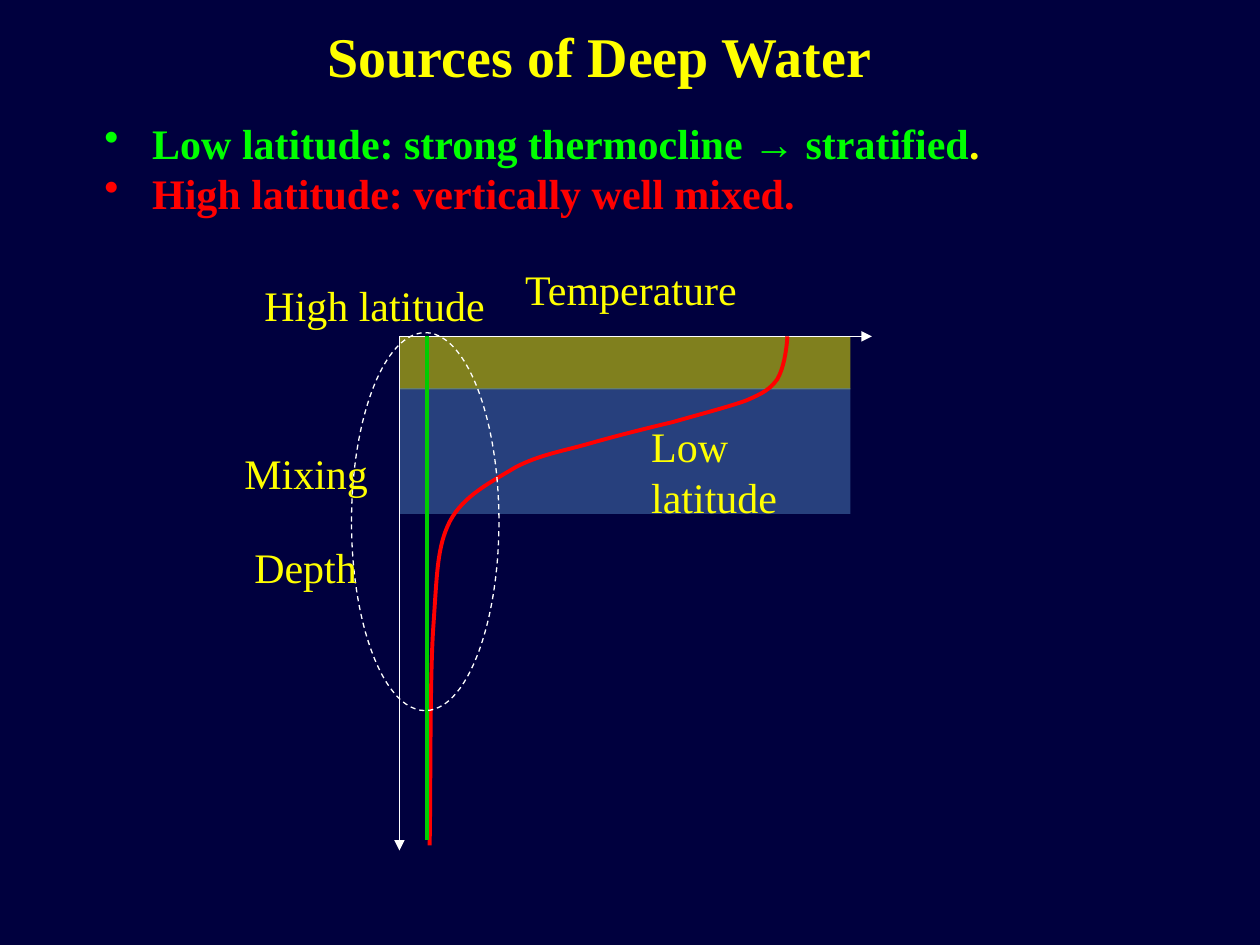
from lxml import etree
from pptx import Presentation
from pptx.dml.color import RGBColor as RGB
from pptx.enum.dml import MSO_LINE as Dash
from pptx.enum.shapes import MSO_CONNECTOR as Link, MSO_SHAPE as Shape
from pptx.enum.text import MSO_AUTO_SIZE as Auto
from pptx.oxml.ns import qn
from pptx.util import Inches, Pt

HUES = {
    "back": "00003E", "text": "FFFF00", "low": "00FF00", "high": "FF0000",
    "warm": "FFFF00", "cool": "4F81BD", "axis": "FFFFFF",
    "curve": "FF0000", "mixed": "00CC00",
}
FONT = "Times New Roman"
LEFT, TOP = 3.17, 2.67  # origin of the depth and temperature axes

LABELS = [
    ("Depth", 1.92, 4.25, 1.04),
    ("Temperature", 4.07, 2.04, 1.96),
    ("Low latitude", 5.07, 3.29, 1.89),
    ("High latitude", 2, 2.17, 1.96),
    ("Mixing", 1.84, 3.5, 1.19),
]
POINTS = [
    (6.25, TOP),
    (6.24, 2.8), (6.22, 2.92), (6.17, 3.01),
    (6.11, 3.09), (6.06, 3.12), (5.92, 3.18),
    (5.78, 3.23), (5.55, 3.29), (5.34, 3.35),
    (5.13, 3.4), (4.89, 3.46), (4.68, 3.52),
    (4.47, 3.58), (4.28, 3.61), (4.09, 3.71),
    (3.91, 3.82), (3.68, 3.93), (3.57, 4.14),
    (3.47, 4.34), (3.47, 4.54), (3.44, 4.97),
    (3.41, 5.4), (3.42, 6.34), (3.41, 6.71),
]


def hue(name):
    return RGB.from_string(HUES[name])


def add(node, tag, **attrs):
    return etree.SubElement(node, qn(tag), attrs)


def add_text(slide, paras, x, y, w, h, size=24, bold=False, bullet=False):
    """Each paragraph is a list of (text, hue) runs."""
    box = slide.shapes.add_textbox(Inches(x), Inches(y), Inches(w), Inches(h))
    frame = box.text_frame
    frame.word_wrap = False
    frame.auto_size = Auto.SHAPE_TO_FIT_TEXT
    for i, runs in enumerate(paras):
        para = frame.add_paragraph() if i else frame.paragraphs[0]
        if bullet:
            props = para._p.get_or_add_pPr()
            dent = Inches(0.38)
            props.set("marL", str(dent))
            props.set("indent", str(-dent))
            add(props, "a:buChar", char="•")
        for text, name in runs:
            run = para.add_run()
            run.text = text
            font = run.font
            font.name, font.size, font.bold = FONT, Pt(size), bold
            font.color.rgb = hue(name)


def set_line(item, name, width):
    item.line.color.rgb = hue(name)
    item.line.width = Pt(width)


def add_band(slide, y, h, name):
    """Half-transparent layer of water."""
    band = slide.shapes.add_shape(
        Shape.RECTANGLE, Inches(LEFT), Inches(y), Inches(3.58), Inches(h))
    band.shadow.inherit = False
    band.line.fill.background()
    band.fill.solid()
    band.fill.fore_color.rgb = hue(name)
    tint = band.element.spPr.find(qn("a:solidFill"))[0]
    add(tint, "a:alpha", val="50000")


def add_line(slide, start, end, name, width, arrow=False):
    ends = [Inches(n) for n in (*start, *end)]
    line = slide.shapes.add_connector(Link.STRAIGHT, *ends)
    set_line(line, name, width)
    if arrow:
        add(line.line._get_or_add_ln(), "a:tailEnd", type="triangle")
    add(line.element.spPr, "a:effectLst")


def add_curve(slide, points, name, width):
    """Cubic curve: a start, then two controls and an end per segment."""
    pts = [(Inches(x), Inches(y)) for x, y in points]
    pen = slide.shapes.build_freeform(*pts[0])
    pen.add_line_segments(pts[1:], close=False)
    curve = pen.convert_to_shape()
    curve.shadow.inherit = False
    curve.fill.background()
    set_line(curve, name, width)
    steps = list(curve.element.iter(qn("a:lnTo")))
    track = steps[0].getparent()
    for i in range(0, len(steps), 3):
        bend = add(track, "a:cubicBezTo")
        for step in steps[i:i + 3]:
            bend.append(step[0])
            track.remove(step)


def add_ring(slide, x, y, w, h):
    ring = slide.shapes.add_shape(
        Shape.OVAL, Inches(x), Inches(y), Inches(w), Inches(h))
    ring.shadow.inherit = False
    ring.fill.background()
    set_line(ring, "axis", 0.75)
    ring.line.dash_style = Dash.DASH


def main():
    deck = Presentation()
    deck.slide_width, deck.slide_height = Inches(10), Inches(7.5)
    slide = deck.slides.add_slide(deck.slide_layouts[6])
    slide.background.fill.solid()
    slide.background.fill.fore_color.rgb = hue("back")

    add_text(slide, [[("Sources of Deep Water", "text")]],
             2.5, 0.12, 4.56, 0.64, size=32, bold=True)
    add_text(slide, [
        [("Low latitude: strong thermocline → stratified", "low"), (".", "text")],
        [("High latitude: vertically well mixed.", "high")],
    ], 0.73, 0.88, 7.2, 0.91, bold=True, bullet=True)

    add_band(slide, TOP, 0.42, "warm")
    add_band(slide, 3.08, 1, "cool")
    for end in [(6.92, TOP), (LEFT, 6.75)]:
        add_line(slide, (LEFT, TOP), end, "axis", 0.75, arrow=True)
    add_curve(slide, POINTS, "curve", 2.25)
    add_line(slide, (3.39, TOP), (3.39, 6.67), "mixed", 2.25)
    add_ring(slide, 2.79, 2.64, 1.17, 3)
    for text, x, y, w in LABELS:
        add_text(slide, [[(text, "text")]], x, y, w, 0.5)

    deck.save("out.pptx")


if __name__ == "__main__":
    main()
